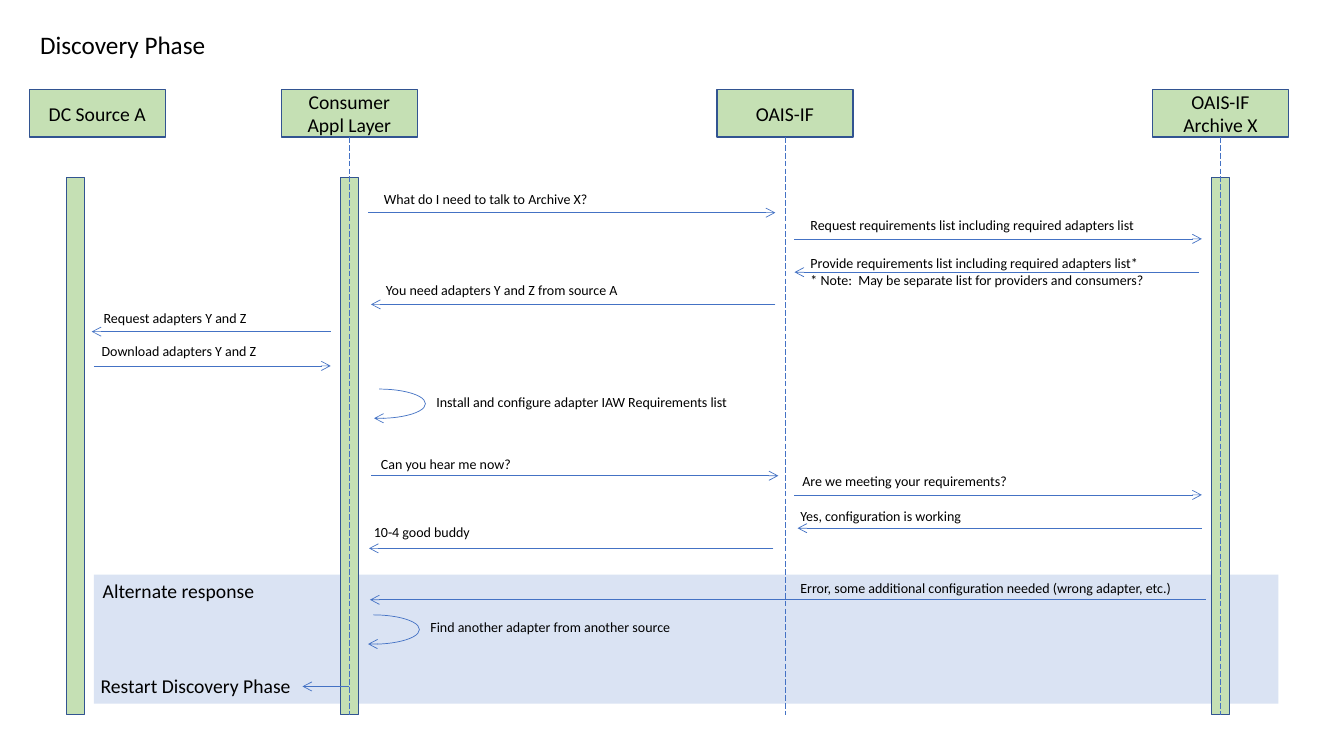
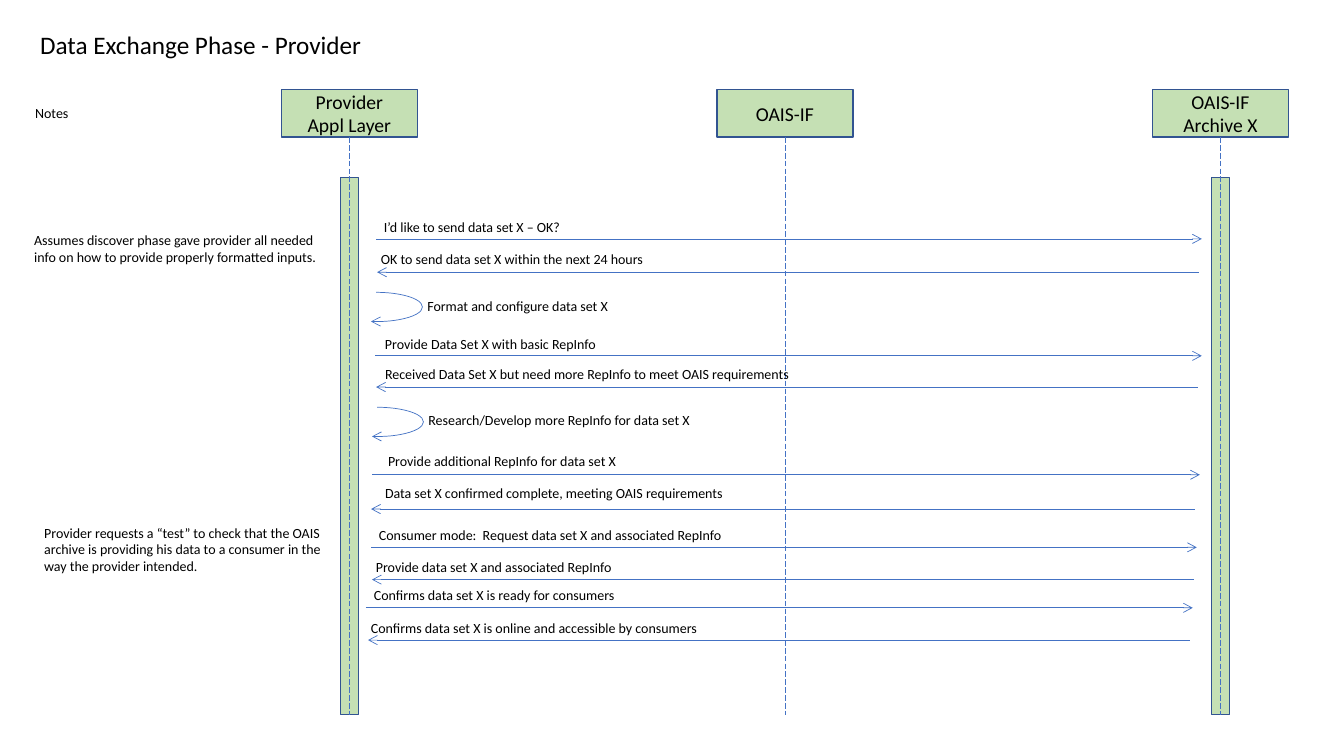
import dataclasses

import lxml.etree
import pptx
import pptx.dml.color
import pptx.enum.dml
import pptx.enum.shapes
import pptx.enum.text
import pptx.oxml.ns
import pptx.util


@dataclasses.dataclass(frozen=True)
class Theme:
    font: str = "Calibri"
    ink: str = "000000"
    paper: str = "FFFFFF"
    green: str = "C5E0B4"
    border: str = "325491"
    arrow: str = "4472C4"
    band: str = "DAE3F3"
    title_size: int = 18
    heading_size: int = 14
    label_size: int = 10
    border_width: float = 1
    line_width: float = 0.5


# Grid: square cells, ten to the inch; all lengths below are in cells
CELL = 0.1
COLUMNS, ROWS = 133.3, 75

# Participants stand on evenly spaced lifelines
APP, HUB, ARCHIVE = (34.65 + 43.2 * i for i in range(3))
HEAD_TOP, HEAD_WIDTH, HEAD_HEIGHT = 8.9, 13.5, 4.7
BAR_TOP, BAR_WIDTH, LIFE_END = 17.6, 1.8, 70.9
LABEL_HEIGHT = 2.7


def cells(count):
    return pptx.util.Inches(count * CELL)


def rgb(value):
    return pptx.dml.color.RGBColor.from_string(value)


class SequenceDeck:
    def __init__(self, theme):
        self.theme = theme
        self.deck = pptx.Presentation()
        self.deck.slide_width = cells(COLUMNS)
        self.deck.slide_height = cells(ROWS)
        self.slide = None

    def start(self, title):
        self.slide = self.deck.slides.add_slide(self.deck.slide_layouts[6])
        self.slide.background.fill.solid()
        self.slide.background.fill.fore_color.rgb = rgb(self.theme.paper)
        self.text(title, 3, 2.4, 46, 4, self.theme.title_size)

    def fill_text(self, frame, content, size, align):
        frame.text = content
        for paragraph in frame.paragraphs:
            paragraph.alignment = align
            paragraph.font.name = self.theme.font
            paragraph.font.size = pptx.util.Pt(size)
            paragraph.font.color.rgb = rgb(self.theme.ink)

    def text(self, content, left, top, width, height=LABEL_HEIGHT, size=None, wrap=True):
        box = self.slide.shapes.add_textbox(*map(cells, (left, top, width, height)))
        box.text_frame.word_wrap = wrap
        self.fill_text(box.text_frame, content, size or self.theme.label_size,
                       pptx.enum.text.PP_ALIGN.LEFT)

    def label(self, content, left, top, width, height=LABEL_HEIGHT):
        self.text(content, left, top, width, height, wrap=False)

    def block(self, left, top, width, height, fill, border=None):
        rectangle = self.slide.shapes.add_shape(
            pptx.enum.shapes.MSO_SHAPE.RECTANGLE, *map(cells, (left, top, width, height)))
        rectangle.shadow.inherit = False
        rectangle.fill.solid()
        rectangle.fill.fore_color.rgb = rgb(fill)
        if border:
            rectangle.line.color.rgb = rgb(border)
            rectangle.line.width = pptx.util.Pt(self.theme.border_width)
        else:
            rectangle.line.fill.background()
        return rectangle

    def bar(self, center):
        self.block(center - BAR_WIDTH / 2, BAR_TOP, BAR_WIDTH, LIFE_END - BAR_TOP,
                   self.theme.green, self.theme.border)

    def head(self, center, name):
        box = self.block(center - HEAD_WIDTH / 2, HEAD_TOP, HEAD_WIDTH, HEAD_HEIGHT,
                         self.theme.green, self.theme.border)
        box.text_frame.word_wrap = True
        box.text_frame.vertical_anchor = pptx.enum.text.MSO_ANCHOR.MIDDLE
        self.fill_text(box.text_frame, name, self.theme.heading_size,
                       pptx.enum.text.PP_ALIGN.CENTER)

    def stroke(self, shape, pointed=True):
        shape.line.color.rgb = rgb(self.theme.arrow)
        shape.line.width = pptx.util.Pt(self.theme.line_width)
        if pointed:
            outline = shape._element.spPr.find(pptx.oxml.ns.qn("a:ln"))
            lxml.etree.SubElement(outline, pptx.oxml.ns.qn("a:tailEnd"), type="arrow")

    def connect(self, x1, y1, x2, y2, pointed=True):
        connector = self.slide.shapes.add_connector(
            pptx.enum.shapes.MSO_CONNECTOR.STRAIGHT, *map(cells, (x1, y1, x2, y2)))
        self.stroke(connector, pointed)
        if not pointed:
            connector.line.dash_style = pptx.enum.dml.MSO_LINE.LONG_DASH
        lxml.etree.SubElement(connector._element.spPr, pptx.oxml.ns.qn("a:effectLst"))

    def participants(self, app_name):
        for center in (APP, ARCHIVE):
            self.bar(center)
        for center, name in ((APP, app_name), (HUB, "OAIS-IF"),
                             (ARCHIVE, "OAIS-IF Archive X")):
            self.head(center, name)
            self.connect(center, HEAD_TOP + HEAD_HEIGHT, center, LIFE_END, pointed=False)

    def message(self, start, end, row, content, *place):
        self.connect(start, row, end, row)
        self.label(content, *place)

    def self_call(self, left, top, content, *place):
        loop = self.slide.shapes.add_shape(
            pptx.enum.shapes.MSO_SHAPE.ARC, *map(cells, (left, top, 9.2, 2.9)))
        loop.shadow.inherit = False
        loop.adjustments[0], loop.adjustments[1] = 162, 65.434
        loop.fill.background()
        self.stroke(loop)
        self.label(content, *place)


# Messages: start, end, row, wording, then label left, top, width (and height)
DISCOVERY_MESSAGES = (
    (36.5, 76.9, 21.1, "What do I need to talk to Archive X?", 37.1, 18.4, 22.5),
    (78.8, 119.2, 23.7, "Request requirements list including required adapters list",
     79.4, 21, 34.4),
    (118.9, 78.8, 27, "Provide requirements list including required adapters list*\n"
     "* Note:  May be separate list for providers and consumers?", 79.4, 24.8, 36.3, 4.4),
    (76.9, 36.8, 30.2, "You need adapters Y and Z from source A", 37.3, 27.4, 25.4),
    (32.8, 9.1, 32.9, "Request adapters Y and Z", 9.3, 30.2, 16.4),
    (9.3, 32.8, 36.3, "Download adapters Y and Z", 9.1, 33.5, 17.6),
    (36.8, 77.2, 47.2, "Can you hear me now?", 36.8, 44.7, 15.1),
    (78.8, 119.2, 49.1, "Are we meeting your requirements?", 78.6, 46.4, 23),
    (119.2, 79.1, 52.4, "Yes, configuration is working", 78.4, 49.9, 18.3),
    (76.7, 36.6, 54.4, "10-4 good buddy", 36.1, 51.4, 11.7),
    (119.6, 36.7, 59.5, "Error, some additional configuration needed (wrong adapter, etc.)",
     78.4, 57, 40.1),
)
EXCHANGE_MESSAGES = (
    (37.3, 119.2, 23.7, "I’d like to send data set X – OK?", 37.1, 21.2, 20.5),
    (118.9, 37.4, 27, "OK to send data set X within the next 24 hours", 36.8, 24.4, 28.5),
    (37.2, 119.2, 35.3, "Provide Data Set X with basic RepInfo", 37.2, 32.8, 23.3),
    (118.8, 37.3, 38.4, "Received Data Set X but need more RepInfo to meet OAIS requirements",
     37.2, 35.8, 42.8),
    (36.9, 119, 47.1, "Provide additional RepInfo for data set X", 37.5, 44.4, 25.2),
    (118.5, 36.8, 50.5, "Data set X confirmed complete, meeting OAIS requirements",
     37.2, 47.6, 36.1),
    (36.8, 118.7, 54.3, "Consumer mode:  Request data set X and associated RepInfo",
     36.6, 51.7, 36.5),
    (118.4, 36.9, 57.5, "Provide data set X and associated RepInfo", 36.3, 54.9, 26.4),
    (36.3, 118.3, 60.3, "Confirms data set X is ready for consumers", 36.1, 57.7, 26.3),
    (118, 36.5, 63.5, "Confirms data set X is online and accessible by consumers",
     35.8, 61, 35.2),
)

# Self calls: loop left, top, wording, then label left, top, width
DISCOVERY_CALLS = (
    (33, 38.6, "Install and configure adapter IAW Requirements list", 42.3, 38.5, 31.4),
    (32.4, 61, "Find another adapter from another source", 41.7, 60.9, 26.2),
)
EXCHANGE_CALLS = (
    (32.7, 29, "Format and configure data set X", 41.4, 29, 20.3),
    (32.8, 40.4, "Research/Develop more RepInfo for data set X", 41.5, 40.3, 28.5),
)

# Side notes: wording, left, top, width, height
EXCHANGE_NOTES = (
    ("Notes", 2.5, 9.9, 23.2, 5.6),
    ("Assumes discover phase gave provider all needed info on how to provide "
     "properly formatted inputs.", 2.4, 22.5, 30.3, 5.6),
    ("Provider requests a “test” to check that the OAIS archive is providing his data "
     "to a consumer in the way the provider intended.", 3.4, 51.5, 30.3, 5.6),
)


def add_traffic(deck, messages, calls):
    for message in messages:
        deck.message(*message)
    for call in calls:
        deck.self_call(*call)


def main():
    theme = Theme()
    deck = SequenceDeck(theme)

    # Discovery phase, with the alternate response on a band
    deck.start("Discovery Phase")
    deck.block(9.3, 57, 117.5, 12.8, theme.band)
    deck.participants("Consumer Appl Layer")
    deck.bar(7.5)
    deck.head(9.65, "DC Source A")
    add_traffic(deck, DISCOVERY_MESSAGES, DISCOVERY_CALLS)
    deck.text("Alternate response", 9.2, 56.9, 18.9, 3.4, theme.heading_size)
    deck.text("Restart Discovery Phase", 9, 66.4, 21.1, 3.4, theme.heading_size)
    deck.connect(APP, 68.1, 30, 68.1)

    # Data exchange phase, with notes in the left margin
    deck.start("Data Exchange Phase - Provider")
    deck.participants("Provider\nAppl Layer")
    add_traffic(deck, EXCHANGE_MESSAGES, EXCHANGE_CALLS)
    for note in EXCHANGE_NOTES:
        deck.text(*note)

    deck.deck.save("out.pptx")


if __name__ == "__main__":
    main()
